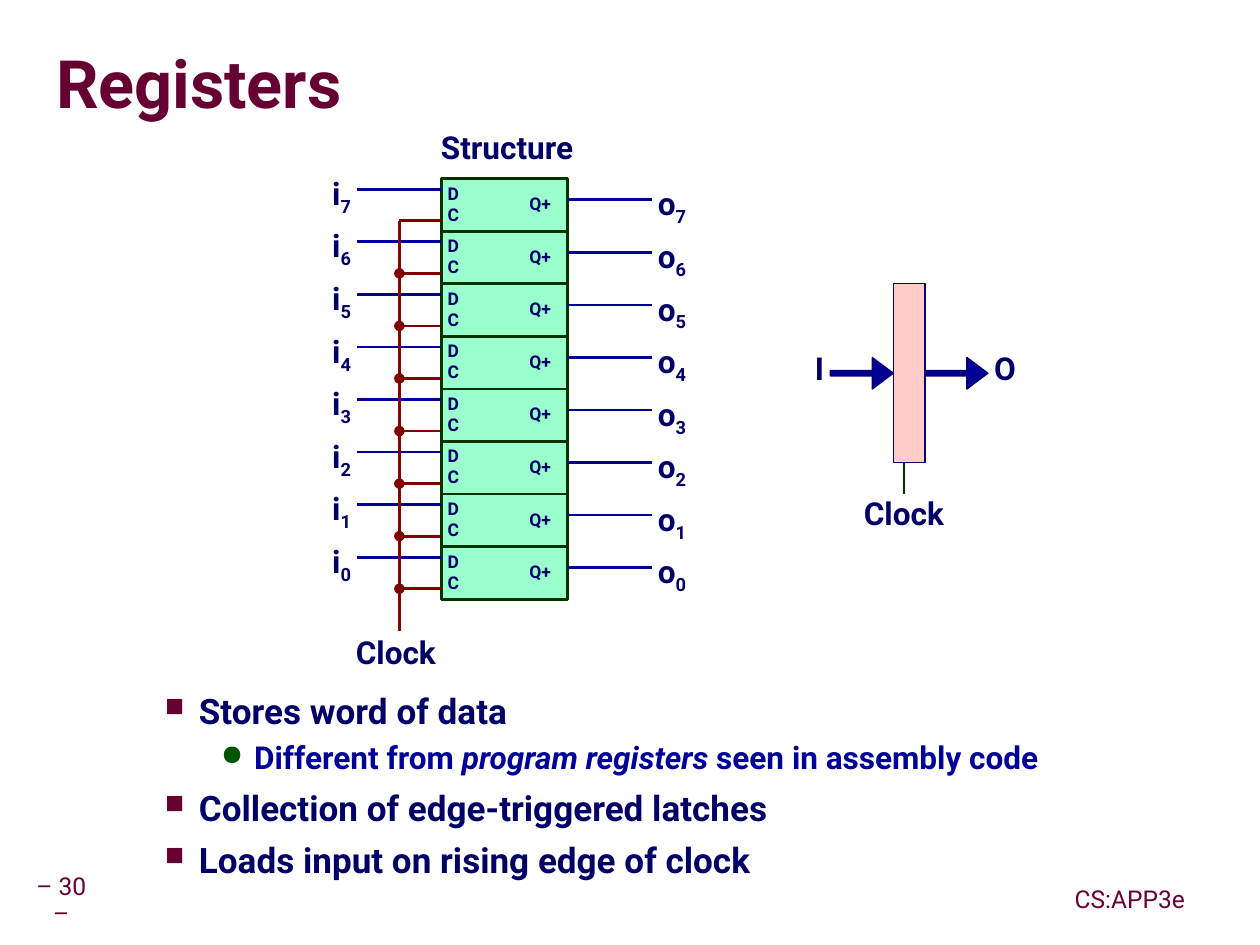
from dataclasses import dataclass

import lxml.etree
import pptx
import pptx.dml.color
import pptx.enum.shapes
import pptx.enum.text
import pptx.oxml.ns
import pptx.presentation
import pptx.shapes.autoshape
import pptx.slide
import pptx.text.text
import pptx.util

Pt = pptx.util.Pt
RGBColor = pptx.dml.color.RGBColor
Shape = pptx.enum.shapes.MSO_SHAPE
Align = pptx.enum.text.PP_ALIGN
Anchor = pptx.enum.text.MSO_ANCHOR
qn = pptx.oxml.ns.qn

NAVY = RGBColor(0x00, 0x00, 0x66)
BLUE = RGBColor(0x00, 0x00, 0x99)
MAROON = RGBColor(0x66, 0x00, 0x33)
CLOCK_RED = RGBColor(0x80, 0x00, 0x00)
DARK_GREEN = RGBColor(0x00, 0x33, 0x00)
BULLET_GREEN = RGBColor(0x00, 0x54, 0x00)
MINT = RGBColor(0x99, 0xFF, 0xCC)
PINK = RGBColor(0xFF, 0xCC, 0xCC)
SHADOW_GREY = RGBColor(0x96, 0x96, 0x96)

FONT = "Roboto"
BITS = 8
PITCH = 30
LATCH_LEFT, LATCH_TOP, LATCH_WIDTH = 252, 102, 72
LATCH_RIGHT = LATCH_LEFT + LATCH_WIDTH
WIRE = 48
BUS_X = 228
DOT = 6


@dataclass(frozen=True)
class Area:
    left: float
    top: float
    width: float
    height: float

    def lengths(self) -> tuple[pptx.util.Pt, ...]:
        return Pt(self.left), Pt(self.top), Pt(self.width), Pt(self.height)


@dataclass(frozen=True)
class Level:
    size: float
    color: RGBColor
    indent: float
    hanging: float
    before: float
    spacing: float
    bullet: str
    bullet_color: RGBColor
    bullet_percent: int


@dataclass(frozen=True)
class Point:
    level: Level
    spans: tuple[str, ...]


MAIN = Level(20, NAVY, 58.5, 19.5, 5.8, 1.0, "■", MAROON, 75)
SUB = Level(18, BLUE, 90, 19, 2.1, 1.07, "●", BULLET_GREEN, 90)
POINTS = (
    Point(MAIN, ("Stores word of data",)),
    Point(SUB, ("Different from ", "program registers", " seen in assembly code")),
    Point(MAIN, ("Collection of edge-triggered latches",)),
    Point(MAIN, ("Loads input on rising edge of clock",)),
)


def write_span(para: pptx.text.text._Paragraph, text: str, *, size: float,
               color: RGBColor = NAVY, bold: bool = True, italic: bool = False,
               baseline: int = 0) -> pptx.text.text._Run:
    span = para.add_run()
    span.text = text
    font = span.font
    font.size, font.name, font.bold, font.italic = Pt(size), FONT, bold, italic
    font.color.rgb = color
    if baseline:
        font._element.set("baseline", str(baseline))
    return span


def add_box(page: pptx.slide.Slide, area: Area, *, wrap: bool = True,
            inset: tuple[float, float] = (3.6, 3.6),
            anchor: Anchor = Anchor.TOP) -> pptx.text.text.TextFrame:
    frame = page.shapes.add_textbox(*area.lengths()).text_frame
    frame.word_wrap = wrap
    frame.vertical_anchor = anchor
    frame.margin_left = frame.margin_right = Pt(inset[0])
    frame.margin_top = frame.margin_bottom = Pt(inset[1])
    return frame


def add_label(page: pptx.slide.Slide, area: Area, text: str, *, size: float = 18,
              subscript: str = "", align: Align = Align.LEFT, wrap: bool = True,
              color: RGBColor = NAVY, bold: bool = True,
              anchor: Anchor = Anchor.TOP) -> None:
    para = add_box(page, area, wrap=wrap, anchor=anchor).paragraphs[0]
    para.alignment = align
    para.line_spacing = 0.9
    write_span(para, text, size=size, color=color, bold=bold)
    if subscript:
        write_span(para, subscript, size=size, color=color, baseline=-25000)


def add_solid(page: pptx.slide.Slide, kind: Shape, area: Area, fill: RGBColor,
              line: RGBColor | None = None,
              width: float = 0.75) -> pptx.shapes.autoshape.Shape:
    shape = page.shapes.add_shape(kind, *area.lengths())
    shape.shadow.inherit = False
    shape.fill.solid()
    shape.fill.fore_color.rgb = fill
    if line is None:
        shape.line.fill.background()
    else:
        shape.line.color.rgb = line
        shape.line.width = Pt(width)
    return shape


def add_wire(page: pptx.slide.Slide, start: tuple[float, float],
             end: tuple[float, float], color: RGBColor) -> None:
    wire = page.shapes.add_connector(pptx.enum.shapes.MSO_CONNECTOR.STRAIGHT,
                                     *map(Pt, start + end))
    wire.line.color.rgb = color
    wire.line.width = Pt(1.5)
    lxml.etree.SubElement(wire._element.spPr, qn("a:effectLst"))


def add_title(page: pptx.slide.Slide) -> None:
    para = add_box(page, Area(32, 19.5, 685, 61), inset=(0, 0),
                   anchor=Anchor.MIDDLE).paragraphs[0]
    para.line_spacing = 0.87
    span = write_span(para, "Registers", size=38, color=MAROON)
    effects = lxml.etree.Element(qn("a:effectLst"))
    shadow = lxml.etree.SubElement(effects, qn("a:outerShdw"), dist="38100", dir="2700000")
    lxml.etree.SubElement(shadow, qn("a:srgbClr"), val=str(SHADOW_GREY))
    span.font._element.find(qn("a:latin")).addprevious(effects)


def add_points(page: pptx.slide.Slide) -> None:
    frame = add_box(page, Area(48, 390, 653, 86.5), inset=(7.2, 3.6))
    for index, point in enumerate(POINTS):
        level = point.level
        para = frame.add_paragraph() if index else frame.paragraphs[0]
        para.line_spacing = level.spacing
        para.space_before = Pt(level.before if index else 0)
        props = para._p.get_or_add_pPr()
        props.set("marL", str(Pt(level.indent)))
        props.set("indent", str(-Pt(level.hanging)))
        tint = lxml.etree.SubElement(props, qn("a:buClr"))
        lxml.etree.SubElement(tint, qn("a:srgbClr"), val=str(level.bullet_color))
        lxml.etree.SubElement(props, qn("a:buSzPct"), val=str(level.bullet_percent * 1000))
        lxml.etree.SubElement(props, qn("a:buChar"), char=level.bullet)
        for number, text in enumerate(point.spans):
            write_span(para, text, size=level.size, color=level.color, italic=number == 1)


def add_structure(page: pptx.slide.Slide) -> None:
    tops = [LATCH_TOP + PITCH * row for row in range(BITS)]
    for top in tops:
        add_solid(page, Shape.RECTANGLE, Area(LATCH_LEFT, top, LATCH_WIDTH, PITCH),
                  MINT, DARK_GREEN, 1.5)
    for row, top in enumerate(tops):
        bit = str(BITS - 1 - row)
        clock_y = top + 24
        add_wire(page, (LATCH_LEFT, top + 6), (LATCH_LEFT - WIRE, top + 6), BLUE)
        add_wire(page, (LATCH_RIGHT + WIRE, top + 12), (LATCH_RIGHT, top + 12), BLUE)
        add_wire(page, (LATCH_LEFT, clock_y), (BUS_X, clock_y), CLOCK_RED)
        if row:
            add_solid(page, Shape.OVAL,
                      Area(BUS_X - DOT / 2, clock_y - DOT / 2, DOT, DOT), CLOCK_RED)
        add_label(page, Area(LATCH_LEFT, top, 18, 18), "D", size=10)
        add_label(page, Area(LATCH_LEFT, top + 12, 18, 18), "C", size=10)
        add_label(page, Area(294, top + 6, 24, 18), "Q+", size=10, align=Align.RIGHT)
        add_label(page, Area(168, top - 6, 36, 27), "i", subscript=bit, align=Align.RIGHT)
        add_label(page, Area(372, top, 36, 27), "o", subscript=bit)
    add_wire(page, (BUS_X, tops[0] + 24), (BUS_X, 360), CLOCK_RED)
    add_label(page, Area(198, 360, 56, 27), "Clock", align=Align.CENTER, wrap=False)
    add_label(page, Area(246, 72, 87, 27), "Structure", align=Align.CENTER, wrap=False)


def add_symbol(page: pptx.slide.Slide) -> None:
    add_solid(page, Shape.RECTANGLE, Area(510, 162, 18, 102), PINK, NAVY)
    for left in (474, 528):
        arrow = add_solid(page, Shape.RIGHT_ARROW, Area(left, 204, 36, 18), BLUE, NAVY)
        arrow.adjustments[0], arrow.adjustments[1] = 1 / 6, 2 / 3
    add_label(page, Area(438, 198, 36, 27), "I", align=Align.RIGHT)
    add_label(page, Area(564, 198, 36, 27), "O")
    add_wire(page, (516, 264), (516, 282), DARK_GREEN)
    add_label(page, Area(488, 281, 56, 27), "Clock", align=Align.CENTER, wrap=False)


def main() -> None:
    deck = pptx.Presentation()
    deck.slide_width, deck.slide_height = Pt(719.28), Pt(539.28)
    page = deck.slides.add_slide(deck.slide_layouts[6])
    for area, text in ((Area(14, 503, 42, 22.5), "– 30 –"),
                       (Area(607.5, 502.5, 75, 23), "CS:APP3e")):
        add_label(page, area, text, size=14, color=MAROON, bold=False,
                  align=Align.CENTER, anchor=Anchor.MIDDLE)
    add_title(page)
    add_points(page)
    add_symbol(page)
    add_structure(page)
    deck.save("out.pptx")


if __name__ == "__main__":
    main()
